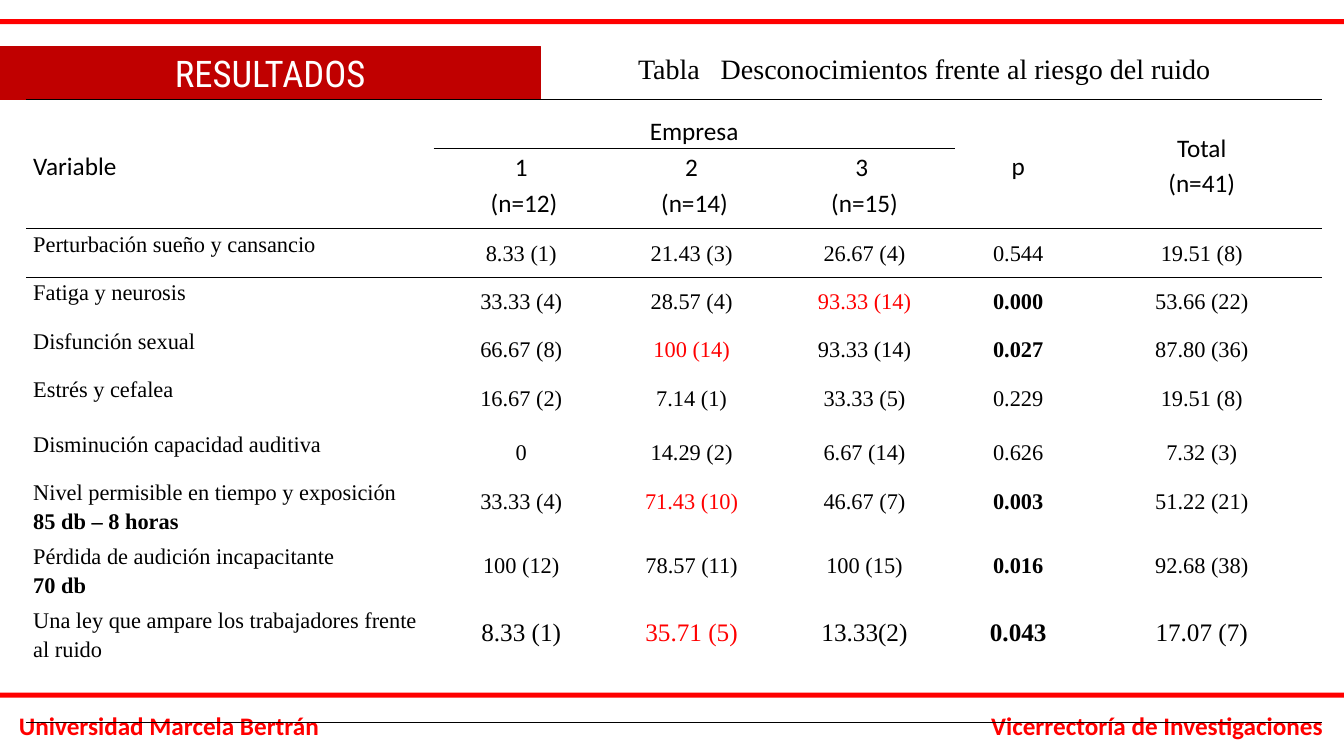
from dataclasses import dataclass

from lxml.etree import SubElement
from pptx import Presentation
from pptx.dml.color import RGBColor as RGB
from pptx.enum.shapes import MSO_SHAPE as Shape
from pptx.enum.text import MSO_ANCHOR as Anchor, MSO_AUTO_SIZE as Fit, PP_ALIGN as Align
from pptx.oxml.ns import qn
from pptx.util import Inches, Pt


@dataclass(frozen=True)
class Theme:
    red: str = "FF0000"
    dark: str = "C00000"
    black: str = "000000"
    white: str = "FFFFFF"
    sans: str = "Calibri"
    serif: str = "Times New Roman"
    narrow: str = "Roboto Condensed"
    banner: float = 26.2
    title: int = 20
    head: int = 18
    body: int = 16


T = Theme()
NO_STYLE = "{2D5ABB26-0587-4C30-8999-92F81FD0307C}"
COLS = [4.04, 1.74, 1.64, 1.79, 1.26, 2.38]
ROWS = [0.48, 0.8, 0.48, 0.48, 0.48, 0.54, 0.48, 0.64, 0.63, 0.69, 0.48]
HEADS = [
    ["Variable", "Empresa", "", "", "p", "Total\n(n=41)"],
    ["", "1\n (n=12)", "2\n (n=14)", "3 \n(n=15)", "", ""],
]
DATA = [
    ["Perturbación sueño y cansancio", "8.33 (1)", "21.43 (3)", "26.67 (4)", "0.544", "19.51 (8)"],
    ["Fatiga y neurosis", "33.33 (4)", "28.57 (4)", "93.33 (14)", "0.000", "53.66 (22)"],
    ["Disfunción sexual", "66.67 (8)", "100 (14)", "93.33 (14)", "0.027", "87.80 (36)"],
    ["Estrés y cefalea", "16.67 (2)", "7.14 (1)", "33.33 (5)", "0.229", "19.51 (8)"],
    ["Disminución capacidad auditiva", "0", "14.29 (2)", "6.67 (14)", "0.626", "7.32 (3)"],
    ["Nivel permisible en tiempo y exposición\n85 db – 8 horas",
     "33.33 (4)", "71.43 (10)", "46.67 (7)", "0.003", "51.22 (21)"],
    ["Pérdida de audición incapacitante\n70 db",
     "100 (12)", "78.57 (11)", "100 (15)", "0.016", "92.68 (38)"],
    ["Una ley que ampare los trabajadores frente al ruido",
     "8.33 (1)", "35.71 (5)", "13.33(2)", "0.043", "17.07 (7)"],
]
P_COL = 4
PEAKS = {(1, 3), (2, 2), (5, 2), (7, 2)}  # data row, column


def add_run(para, text, size, font, color, bold=False):
    run = para.add_run()
    run.text = text
    run.font.size, run.font.name, run.font.bold = Pt(size), font, bold
    run.font.color.rgb = RGB.from_string(color)


def add_bar(slide, box, color, edge=False):
    bar = slide.shapes.add_shape(Shape.RECTANGLE, *map(Inches, box))
    bar.shadow.inherit = False
    bar.fill.solid()
    bar.fill.fore_color.rgb = RGB.from_string(color)
    if edge:
        bar.line.color.rgb = RGB.from_string(color)
        bar.line.width = Pt(0.75)
    else:
        bar.line.fill.background()
    return bar


def add_banner(slide, text):
    frame = add_bar(slide, (0, 0.46, 5.36, 0.53), T.dark, edge=True).text_frame
    frame.word_wrap = True
    frame.vertical_anchor = Anchor.BOTTOM
    frame.margin_left = frame.margin_right = Inches(0.08)
    frame.margin_top = frame.margin_bottom = Inches(0.04)
    para = frame.paragraphs[0]
    para.alignment, para.line_spacing = Align.CENTER, 0.9
    add_run(para, text, T.banner, T.narrow, T.white)


def add_label(slide, box, text, size, font, color, bold=False, align=Align.LEFT):
    frame = slide.shapes.add_textbox(*map(Inches, box)).text_frame
    frame.word_wrap = True
    frame.auto_size = Fit.SHAPE_TO_FIT_TEXT
    para = frame.paragraphs[0]
    para.alignment = align
    add_run(para, text, size, font, color, bold)
    return para


def set_tab(para, pos):
    tabs = SubElement(para._p.get_or_add_pPr(), qn("a:tabLst"))
    SubElement(tabs, qn("a:tab"), pos=str(Inches(pos)), algn="l")


def rule_cell(cell, sides):
    """Draw black rules on the given sides, placed ahead of the cell fill."""
    props = cell._tc.get_or_add_tcPr()
    for spot, side in enumerate(sides):
        line = SubElement(props, qn("a:ln" + side), w=str(Pt(1)))
        fill = SubElement(line, qn("a:solidFill"))
        SubElement(fill, qn("a:srgbClr"), val=T.black)
        props.insert(spot, line)


def sides_of(row, col):
    if row == 0 or (row == 1 and 1 <= col <= 3):
        return "TB"
    return {1: "B", 2: "T", len(ROWS) - 1: "B"}.get(row, "")


def fill_cell(cell, text, space, align, size, font, color=T.black, bolds=(False,)):
    """Write one paragraph per line; bolds gives the weight of each, the last one repeating."""
    cell.margin_left = cell.margin_right = Inches(0.07)
    cell.margin_top = cell.margin_bottom = 0
    for n, line in enumerate(text.split("\n")):
        para = cell.text_frame.add_paragraph() if n else cell.text_frame.paragraphs[0]
        para.alignment, para.line_spacing = align, space
        add_run(para, line, size, font, color, bolds[min(n, len(bolds) - 1)])


def fill_heads(table):
    for row, texts in enumerate(HEADS):
        for col, text in enumerate(texts):
            if text:
                cell = table.cell(row, col)
                cell.vertical_anchor = Anchor.TOP if row else Anchor.MIDDLE
                fill_cell(cell, text, 1.5 if text == "Empresa" else 1.15,
                          Align.CENTER if col else Align.LEFT, T.head, T.sans)
    table.cell(0, 1).merge(table.cell(0, 3))
    for col in (0, 4, 5):
        table.cell(0, col).merge(table.cell(1, col))


def fill_data(table):
    for row, (name, *values) in enumerate(DATA):
        line = row + len(HEADS)
        fill_cell(table.cell(line, 0), name, 1.15, Align.LEFT, T.body, T.serif,
                  bolds=(False, True))
        size = T.head if row == len(DATA) - 1 else T.body
        for col, text in enumerate(values, 1):
            fill_cell(table.cell(line, col), text, 1.5, Align.CENTER, size, T.serif,
                      T.red if (row, col) in PEAKS else T.black,
                      (col == P_COL and float(text) < 0.05,))


def add_results(slide):
    box = map(Inches, (0.26, 0.99, sum(COLS), sum(ROWS)))
    table = slide.shapes.add_table(len(ROWS), len(COLS), *box).table
    table.first_row = table.horz_banding = False
    table._tbl.tblPr.find(qn("a:tableStyleId")).text = NO_STYLE
    for col, width in zip(table.columns, COLS):
        col.width = Inches(width)
    for row, height in zip(table.rows, ROWS):
        row.height = Inches(height)
    for row in range(len(ROWS)):
        for col in range(len(COLS)):
            cell = table.cell(row, col)
            if row == 8:
                cell.fill.solid()
                cell.fill.fore_color.rgb = RGB.from_string(T.white)
            else:
                cell.fill.background()
            rule_cell(cell, sides_of(row, col))
    fill_heads(table)
    fill_data(table)


def main():
    deck = Presentation()
    deck.slide_width, deck.slide_height = Inches(13.33), Inches(7.5)
    slide = deck.slides.add_slide(deck.slide_layouts[6])
    for top in (6.87, 0.19):
        add_bar(slide, (0, top, 13.33, 0.05), T.red)
    add_label(slide, (0.09, 7, 3.27, 0.4), "Universidad Marcela Bertrán",
              T.head, T.sans, T.red, True)
    add_label(slide, (8.95, 7, 4.27, 0.4), "Vicerrectoría de Investigaciones",
              T.head, T.sans, T.red, True, Align.RIGHT)
    add_banner(slide, "RESULTADOS")
    add_results(slide)
    title = add_label(slide, (6.23, 0.46, 5.97, 0.44),
                      "Tabla\tDesconocimientos frente al riesgo del ruido",
                      T.title, T.serif, T.black)
    set_tab(title, 0.82)
    deck.save("out.pptx")


if __name__ == "__main__":
    main()
